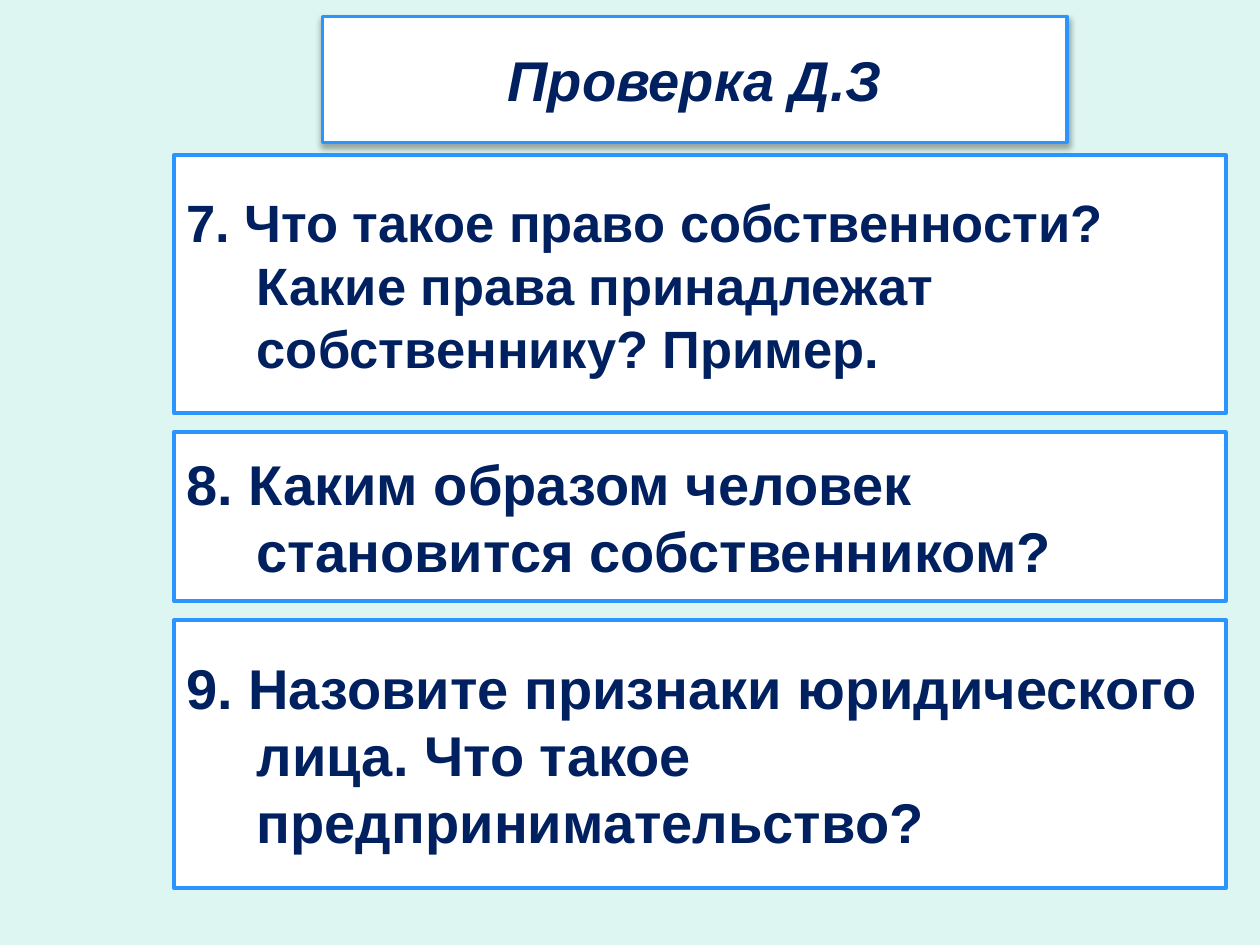
from lxml.etree import SubElement
from pptx import Presentation
from pptx.dml.color import RGBColor
from pptx.enum.shapes import MSO_SHAPE
from pptx.enum.text import MSO_ANCHOR, PP_ALIGN
from pptx.oxml.ns import qn
from pptx.util import Inches, Pt


def color(hex_code):
    return RGBColor.from_string(hex_code)


def write_text(frame, text, size, ink, font="Arial", italic=False,
               align=PP_ALIGN.LEFT, hanging=0):
    frame.word_wrap = True
    frame.vertical_anchor = MSO_ANCHOR.MIDDLE
    paragraph = frame.paragraphs[0]
    paragraph.alignment = align
    if hanging:
        properties = paragraph._p.get_or_add_pPr()
        properties.set("marL", str(Inches(hanging)))
        properties.set("indent", str(-Inches(hanging)))
    run = paragraph.add_run()
    run.text = text
    run.font.name = font
    run.font.size = Pt(size)
    run.font.bold = True
    run.font.italic = italic
    run.font.color.rgb = color(ink)


class HomeworkSlide:
    background = "DEF6F1"
    panel = "FFFFFF"
    border = "2A94FF"
    ink = "002060"

    def __init__(self, presentation):
        self.slide = presentation.slides.add_slide(presentation.slide_layouts[6])
        fill = self.slide.background.fill
        fill.solid()
        fill.fore_color.rgb = color(self.background)

    def box(self, left, top, width, height):
        frame = self.slide.shapes.add_shape(
            MSO_SHAPE.RECTANGLE,
            Inches(left), Inches(top), Inches(width), Inches(height))
        frame.shadow.inherit = False
        frame.fill.solid()
        frame.fill.fore_color.rgb = color(self.panel)
        frame.line.color.rgb = color(self.border)
        frame.line.width = Pt(2)
        return frame

    def drop_shadow(self, shape):
        effects = shape._element.spPr.find(qn("a:effectLst"))
        shadow = SubElement(effects, qn("a:outerShdw"), blurRad=str(Pt(3.5)),
                            dist=str(Pt(2.2)), dir="5400000", rotWithShape="0")
        shade = SubElement(shadow, qn("a:srgbClr"), val="000000")
        SubElement(shade, qn("a:alpha"), val="32000")

    def title(self, text):
        heading = self.box(2.56, 0.13, 5.91, 1)
        self.drop_shadow(heading)
        write_text(heading.text_frame, text, size=32, ink=self.ink,
                   italic=True, align=PP_ALIGN.CENTER)

    def question(self, text, top, height, size):
        card = self.box(1.38, top, 8.35, height)
        write_text(card.text_frame, text, size=size, ink=self.ink, hanging=0.56)


def main():
    presentation = Presentation()
    presentation.slide_width = Inches(10)
    presentation.slide_height = Inches(7.5)
    homework = HomeworkSlide(presentation)

    # Heading
    homework.title("Проверка Д.З")

    # Questions: text, height, font size
    questions = [
        ("7. Что такое право собственности? Какие права принадлежат "
         "собственнику? Пример.", 2.05, 30),
        ("8. Каким образом человек становится собственником?", 1.34, 32),
        ("9. Назовите признаки юридического лица. Что такое "
         "предпринимательство?", 2.13, 32),
    ]
    top, gap = 1.23, 0.15
    for text, height, size in questions:
        homework.question(text, top, height, size)
        top += height + gap

    presentation.save("out.pptx")


if __name__ == "__main__":
    main()
